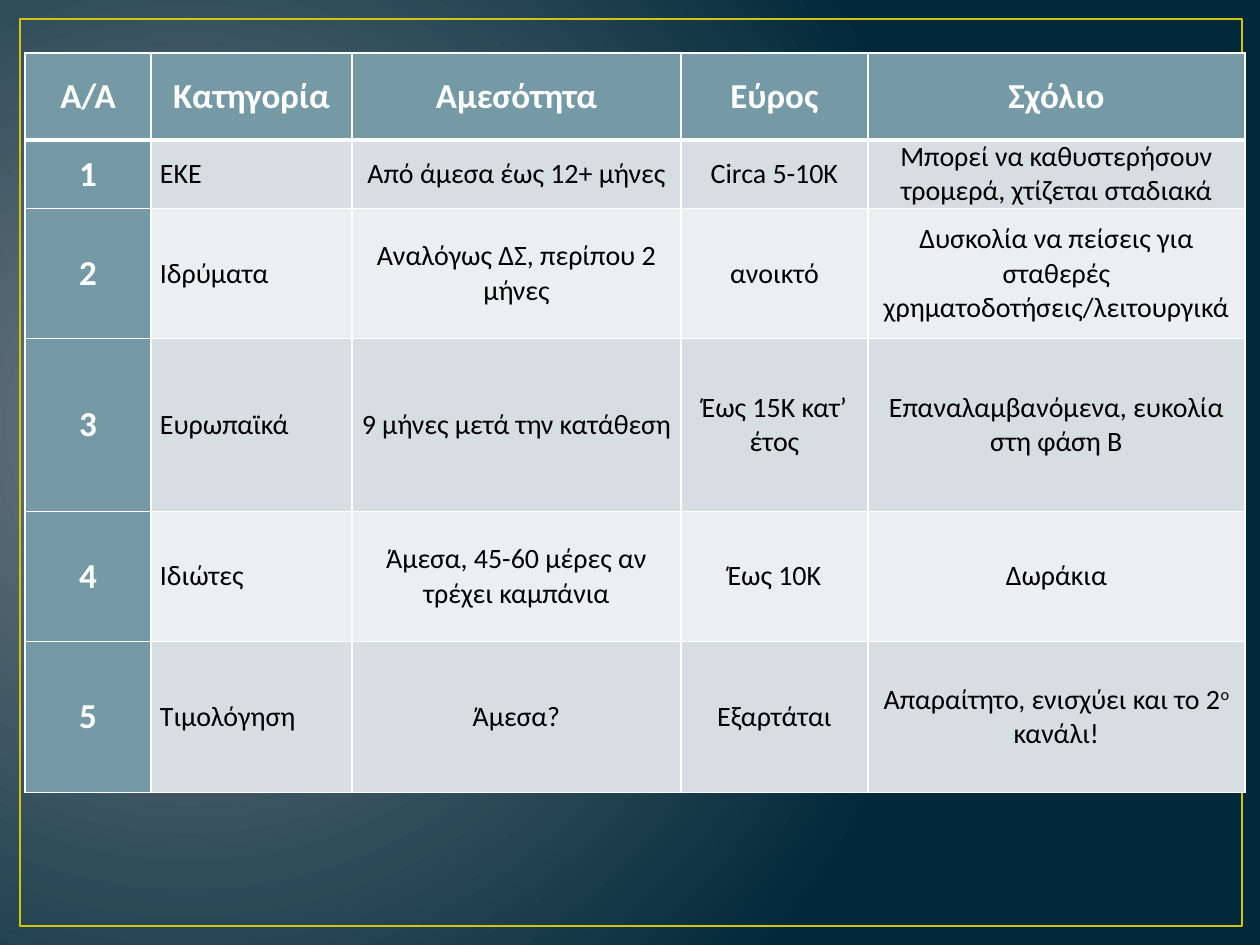
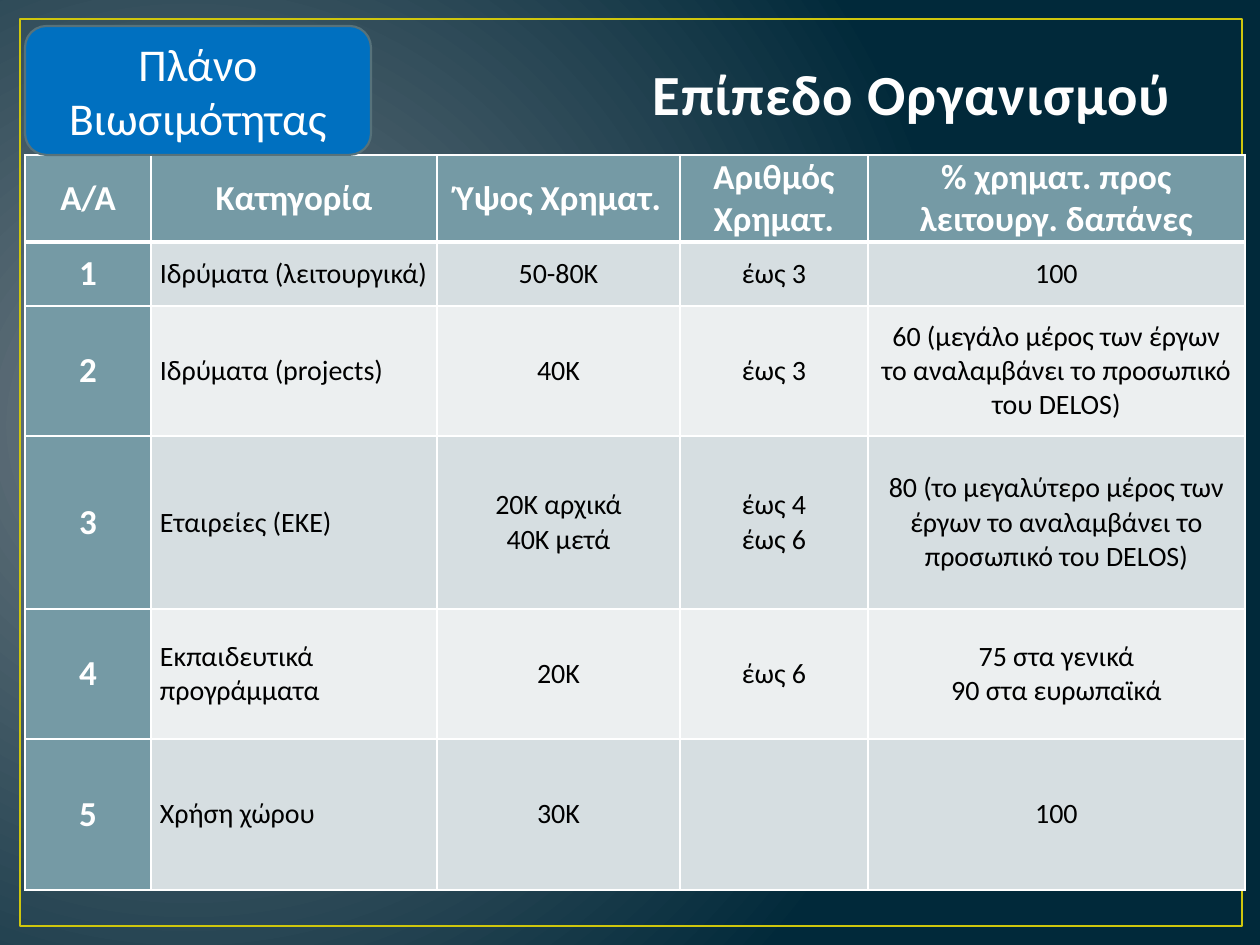
from dataclasses import dataclass

from lxml import etree
from pptx import Presentation
from pptx.dml.color import RGBColor
from pptx.enum.shapes import MSO_SHAPE
from pptx.enum.text import MSO_ANCHOR, MSO_AUTO_SIZE, PP_ALIGN
from pptx.oxml.ns import qn
from pptx.util import Emu, Pt

LEFT, CENTER = PP_ALIGN.LEFT, PP_ALIGN.CENTER
MIDDLE, BOTTOM = MSO_ANCHOR.MIDDLE, MSO_ANCHOR.BOTTOM
RECTANGLE, ROUNDED = MSO_SHAPE.RECTANGLE, MSO_SHAPE.ROUNDED_RECTANGLE
NO_AUTOFIT = MSO_AUTO_SIZE.NONE
TITLE_ONLY, BLANK = 5, 6

PX_PER_INCH = 126
FONT = "Calibri"
GLOW, NIGHT, GOLD = "717C84", "01293A", "CFC60D"
WHITE, BLACK, TITLE_WHITE = "FFFFFF", "000000", "FEFEFE"
TEAL, TITLE_EDGE = "759AA5", "384F55"
BANDS = ("D6DEE1", "ECEFF0")
BADGE_BLUE, BADGE_EDGE = "0070C0", "57727A"

TABLE_LEFT = 25
ROW_HEIGHTS = (87, 64, 130, 173, 130, 151)
CELL_INSET = 9
GRID_WIDTH, HEADER_RULE = 1, 3


@dataclass(frozen=True)
class Box:
    left: int
    top: int
    width: int
    height: int

    def emu(self) -> tuple:
        return px(self.left), px(self.top), px(self.width), px(self.height)


@dataclass(frozen=True)
class FundingTable:
    """Rows hold the text after the running number; ^ marks a superscript."""
    top: int
    columns: tuple
    headings: tuple
    rows: tuple


FRAME = Box(20, 19, 1222, 907)
TITLE = Box(640, 6, 557, 127)
BADGE = Box(25, 26, 346, 129)

TIMING = FundingTable(
    top=53,
    columns=(126, 201, 329, 187, 377),
    headings=("Α/Α", "Κατηγορία", "Αμεσότητα", "Εύρος", "Σχόλιο"),
    rows=(
        ("ΕΚΕ", "Από άμεσα έως 12+ μήνες", "Circa 5-10Κ",
         "Μπορεί να καθυστερήσουν τρομερά, χτίζεται σταδιακά"),
        ("Ιδρύματα", "Αναλόγως ΔΣ, περίπου 2 μήνες", "ανοικτό",
         "Δυσκολία να πείσεις για σταθερές χρηματοδοτήσεις/λειτουργικά"),
        ("Ευρωπαϊκά", "9 μήνες μετά την κατάθεση", "Έως 15Κ κατ’ έτος",
         "Επαναλαμβανόμενα, ευκολία στη φάση Β"),
        ("Ιδιώτες", "Άμεσα, 45-60 μέρες αν τρέχει καμπάνια", "Έως 10Κ",
         "Δωράκια"),
        ("Τιμολόγηση", "Άμεσα?", "Εξαρτάται",
         "Απαραίτητο, ενισχύει και το 2^ο^ κανάλι!"),
    ),
)

SUSTAINABILITY = FundingTable(
    top=155,
    columns=(126, 286, 243, 188, 377),
    headings=("Α/Α", "Κατηγορία", "Ύψος Χρηματ.", "Αριθμός Χρηματ.",
              "% χρηματ. προς λειτουργ. δαπάνες"),
    rows=(
        ("Ιδρύματα (λειτουργικά)", "50-80Κ", "έως 3", "100"),
        ("Ιδρύματα (projects)", "40K", "έως 3",
         "60 (μεγάλο μέρος των έργων το αναλαμβάνει το προσωπικό του DELOS)"),
        ("Εταιρείες (ΕΚΕ)", "20Κ αρχικά\n40Κ μετά", "έως 4\nέως 6",
         "80 (το μεγαλύτερο μέρος των έργων το αναλαμβάνει το προσωπικό του DELOS)"),
        ("Εκπαιδευτικά προγράμματα", "20Κ", "έως 6",
         "75 στα γενικά\n90 στα ευρωπαϊκά"),
        ("Χρήση χώρου", "30Κ", "", "100"),
    ),
)


def px(length: int) -> Emu:
    return Emu(round(length * 914400 / PX_PER_INCH))


def rgb(hex_color: str) -> RGBColor:
    return RGBColor.from_string(hex_color)


def add_line(parent, tag: str, color: str, width: float):
    """Append a solid DrawingML line to a cell's or run's properties."""
    line = etree.SubElement(parent, qn(tag), w=str(Pt(width)))
    fill = etree.SubElement(line, qn("a:solidFill"))
    etree.SubElement(fill, qn("a:srgbClr"), val=color)
    return line


def write_text(frame, text: str, *, size: float, color: str,
               bold: bool = False, align=CENTER) -> None:
    for index, line in enumerate(text.split("\n")):
        paragraph = frame.add_paragraph() if index else frame.paragraphs[0]
        paragraph.alignment = align
        paragraph.font.size = Pt(size)
        for part, piece in enumerate(line.split("^")):
            if not piece:
                continue
            run = paragraph.add_run()
            run.text = piece
            font = run.font
            font.name, font.size, font.bold = FONT, Pt(size), bold
            font.color.rgb = rgb(color)
            if part % 2:
                run._r.get_or_add_rPr().set("baseline", "30000")


def add_panel(slide, box: Box, kind, *, line: str, width: float, fill: str = ""):
    panel = slide.shapes.add_shape(kind, *box.emu())
    panel.shadow.inherit = False
    panel.line.color.rgb = rgb(line)
    panel.line.width = Pt(width)
    if fill:
        panel.fill.solid()
        panel.fill.fore_color.rgb = rgb(fill)
    else:
        panel.fill.background()
    return panel


def set_background(master) -> None:
    fill = master.background.fill
    fill.gradient()
    for stop, color in zip(fill.gradient_stops, (GLOW, NIGHT)):
        stop.color.rgb = rgb(color)
    gradient = master.element.find(".//" + qn("a:gradFill"))
    for linear in gradient.findall(qn("a:lin")):
        gradient.remove(linear)
    circle = etree.SubElement(gradient, qn("a:path"), path="circle")
    etree.SubElement(circle, qn("a:fillToRect"),
                     l="15000", t="50000", r="85000", b="60000")


def share_frame(slide, master) -> None:
    """Move the gold frame behind everything on the slide master."""
    frame = add_panel(slide, FRAME, RECTANGLE, line=GOLD, width=1.5).element
    frame.nvSpPr.cNvPr.set("id", "99")
    master.element.cSld.spTree.insert(2, frame)


def style_cell(cell, row: int, column: int) -> None:
    properties = cell._tc.get_or_add_tcPr()
    widths = {"a:lnL": GRID_WIDTH, "a:lnR": GRID_WIDTH,
              "a:lnT": HEADER_RULE if row == 1 else GRID_WIDTH,
              "a:lnB": HEADER_RULE if row == 0 else GRID_WIDTH}
    for tag, width in widths.items():
        add_line(properties, tag, WHITE, width)
    cell.fill.solid()
    is_heading = row == 0 or column == 0
    cell.fill.fore_color.rgb = rgb(TEAL if is_heading else BANDS[(row - 1) % 2])
    cell.vertical_anchor = MIDDLE
    cell.margin_left = cell.margin_right = px(CELL_INSET)
    cell.margin_top = cell.margin_bottom = 0


def add_funding_table(slide, data: FundingTable) -> None:
    box = Box(TABLE_LEFT, data.top, sum(data.columns), sum(ROW_HEIGHTS))
    table = slide.shapes.add_table(
        len(ROW_HEIGHTS), len(data.columns), *box.emu()).table
    for column, width in zip(table.columns, data.columns):
        column.width = px(width)
    for row, height in zip(table.rows, ROW_HEIGHTS):
        row.height = px(height)
    numbered = [(str(number), *texts) for number, texts in enumerate(data.rows, 1)]
    for row, texts in enumerate([data.headings, *numbered]):
        for column, text in enumerate(texts):
            cell = table.cell(row, column)
            style_cell(cell, row, column)
            if row == 0 or column == 0:
                write_text(cell.text_frame, text, size=20, color=WHITE, bold=True)
            else:
                write_text(cell.text_frame, text, size=16, color=BLACK,
                           align=LEFT if column == 1 else CENTER)


def set_title(slide, text: str) -> None:
    title = slide.shapes.title
    title.left, title.top, title.width, title.height = TITLE.emu()
    frame = title.text_frame
    frame.auto_size = NO_AUTOFIT
    frame.word_wrap = True
    frame.vertical_anchor = BOTTOM
    write_text(frame, text, size=32.4, color=TITLE_WHITE, bold=True, align=LEFT)
    properties = frame.paragraphs[0].runs[0]._r.get_or_add_rPr()
    properties.set("spc", "50")
    properties.insert(0, add_line(properties, "a:ln", TITLE_EDGE, 1.05))


def add_badge(slide, text: str) -> None:
    badge = add_panel(slide, BADGE, ROUNDED, line=BADGE_EDGE, width=1.25,
                      fill=BADGE_BLUE)
    badge.text_frame.word_wrap = True
    badge.text_frame.vertical_anchor = MIDDLE
    write_text(badge.text_frame, text, size=26, color=WHITE)


def main() -> None:
    deck = Presentation()
    deck.slide_width, deck.slide_height = px(1260), px(945)
    set_background(deck.slide_master)

    timing = deck.slides.add_slide(deck.slide_layouts[BLANK])
    share_frame(timing, deck.slide_master)
    add_funding_table(timing, TIMING)

    plan = deck.slides.add_slide(deck.slide_layouts[TITLE_ONLY])
    set_title(plan, "Επίπεδο Οργανισμού")
    add_funding_table(plan, SUSTAINABILITY)
    add_badge(plan, "Πλάνο Βιωσιμότητας")

    deck.save("out.pptx")


if __name__ == "__main__":
    main()
